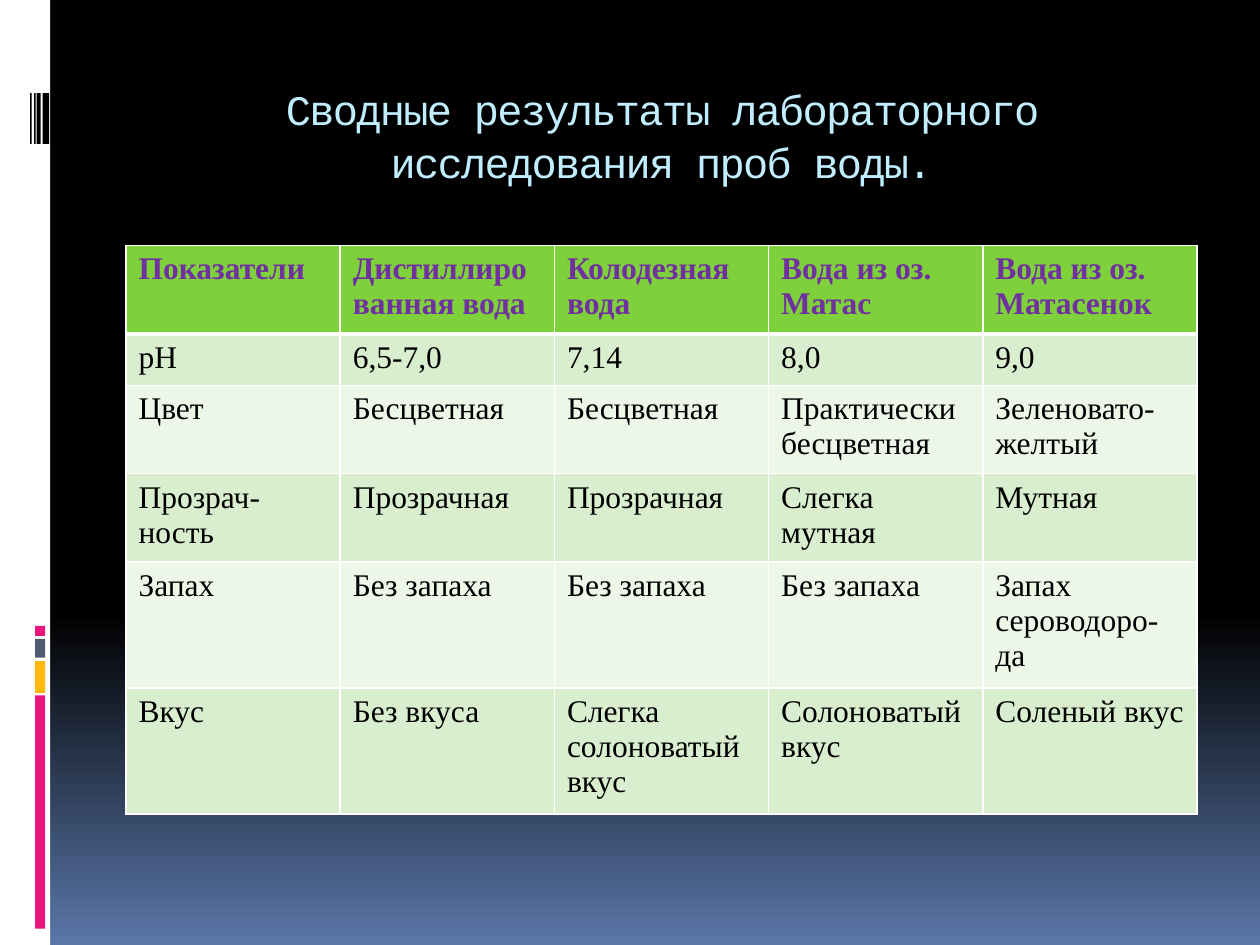
import pptx
import pptx.util
import pptx.dml.color
import pptx.enum.shapes
import pptx.enum.text
import pptx.oxml.ns
import lxml.etree

Cm = pptx.util.Cm
Pt = pptx.util.Pt
RGBColor = pptx.dml.color.RGBColor
qn = pptx.oxml.ns.qn

WHITE = RGBColor(0xFF, 0xFF, 0xFF)
BLACK = RGBColor(0x00, 0x00, 0x00)
BLUE = RGBColor(0x5A, 0x77, 0xA9)
PINK = RGBColor(0xEA, 0x15, 0x7A)
AMBER = RGBColor(0xFE, 0xB8, 0x0A)
SLATE = RGBColor(0x4E, 0x5B, 0x6F)
ICE = RGBColor(0xC1, 0xEE, 0xFF)
PURPLE = RGBColor(0x70, 0x30, 0xA0)
GREEN = RGBColor(0x7F, 0xD1, 0x3B)
BAND_DARK = RGBColor(0xD8, 0xEE, 0xCE)
BAND_LIGHT = RGBColor(0xEC, 0xF7, 0xE8)

ROWS = [
    ["Показатели", "Дистиллированная вода", "Колодезная вода",
     "Вода из оз. Матас", "Вода из оз. Матасенок"],
    ["pH", "6,5-7,0", "7,14", "8,0", "9,0"],
    ["Цвет", "Бесцветная", "Бесцветная", "Практически бесцветная",
     "Зеленовато-желтый"],
    ["Прозрач-ность", "Прозрачная", "Прозрачная", "Слегка мутная", "Мутная"],
    ["Запах", "Без запаха", "Без запаха", "Без запаха", "Запах сероводоро-да"],
    ["Вкус", "Без вкуса", "Слегка солоноватый вкус", "Солоноватый вкус",
     "Соленый вкус"],
]
ROW_HEIGHTS = [1.78, 1.04, 1.78, 1.78, 2.54, 2.54]


def add_bar(left, top, width, height, color):
    sp = s.shapes.add_shape(pptx.enum.shapes.MSO_SHAPE.RECTANGLE,
                            Cm(left), Cm(top), Cm(width), Cm(height))
    sp.shadow.inherit = False
    sp.fill.solid()
    sp.fill.fore_color.rgb = color
    sp.line.fill.background()


def add_border(cell, side, width):
    """Draw one white cell edge; call before the cell's fill is set."""
    ln = lxml.etree.SubElement(cell._tc.get_or_add_tcPr(), qn("a:ln" + side),
                               w=str(Pt(width)))
    fill = lxml.etree.SubElement(ln, qn("a:solidFill"))
    lxml.etree.SubElement(fill, qn("a:srgbClr"), val=str(WHITE))


prs = pptx.Presentation()
prs.slide_width = Cm(25.4)
prs.slide_height = Cm(19.05)
s = prs.slides.add_slide(prs.slide_layouts[6])

# Background: black down to 65 %, then fading to blue
bg = s.background.fill
bg.gradient()
bg.gradient_angle = 270
for stop, (position, color) in zip(bg.gradient_stops, [(0.65, BLACK), (1, BLUE)]):
    stop.position = position
    stop.color.rgb = color

# Side strip with its coloured bars and black stripes
add_bar(0, 0, 1.01, 19.05, WHITE)
for top, height, color in [(14.02, 4.7, PINK), (13.33, 0.64, AMBER),
                           (12.88, 0.38, SLATE), (12.62, 0.2, PINK)]:
    add_bar(0.71, top, 0.2, height, color)
for left, width in [(0.86, 0.13), (0.74, 0.08), (0.69, 0.03), (0.61, 0.03)]:
    add_bar(left, 1.88, width, 1.02, BLACK)

# Title
tf = s.shapes.add_textbox(Cm(2.54), Cm(1.42), Cm(21.59), Cm(2.54)).text_frame
tf.word_wrap = True
tf.vertical_anchor = pptx.enum.text.MSO_ANCHOR.MIDDLE
p = tf.paragraphs[0]
p.alignment = pptx.enum.text.PP_ALIGN.CENTER
p.line_spacing = 1.06
r = p.add_run()
r.text = "Сводные результаты лабораторного исследования проб воды."
r.font.name = "Courier New"
r.font.size = Pt(24)
r.font.color.rgb = ICE
r.font._element.set("spc", "-100")

# Results table
table = s.shapes.add_table(len(ROWS), len(ROWS[0]), Cm(2.54), Cm(4.95),
                           Cm(21.59), Cm(sum(ROW_HEIGHTS))).table
for i, (texts, height) in enumerate(zip(ROWS, ROW_HEIGHTS)):
    table.rows[i].height = Cm(height)
    header = i == 0
    for j, text in enumerate(texts):
        cell = table.cell(i, j)
        add_border(cell, "L", 1)
        add_border(cell, "R", 1)
        add_border(cell, "T", 3 if i == 1 else 1)
        add_border(cell, "B", 3 if header else 1)
        cell.fill.solid()
        cell.fill.fore_color.rgb = (GREEN if header else
                                    BAND_DARK if i % 2 else BAND_LIGHT)
        cell.text = text
        font = cell.text_frame.paragraphs[0].font
        font.name = "Times New Roman"
        font.size = Pt(18)
        font.bold = header
        font.color.rgb = PURPLE if header else BLACK

prs.save("out.pptx")
